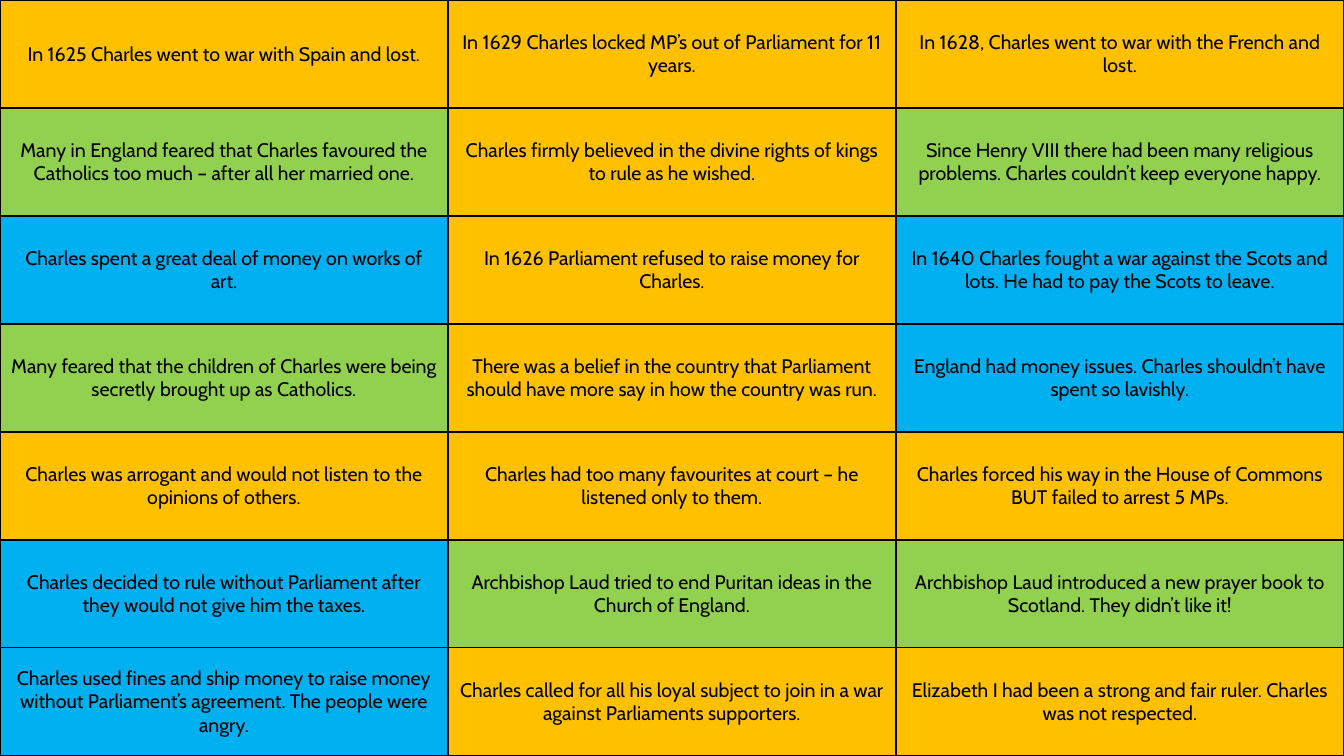
from lxml.etree import SubElement
from pptx import Presentation
from pptx.dml.color import RGBColor
from pptx.enum.text import MSO_ANCHOR, PP_ALIGN
from pptx.oxml.ns import qn
from pptx.util import Pt

WIDTH, HEIGHT = 960, 540
BLACK = "000000"
POLITICS, RELIGION, MONEY = "FFC000", "92D050", "00B0F0"

CAUSES = [
    [("In 1625 Charles went to war with Spain and lost.", POLITICS),
     ("In 1629 Charles locked MP’s out of Parliament for 11 years.", POLITICS),
     ("In 1628, Charles went to war with the French and lost.", POLITICS)],
    [("Many in England feared that Charles favoured the Catholics too much – after all her married one.", RELIGION),
     ("Charles firmly believed in the divine rights of kings to rule as he wished.", POLITICS),
     ("Since Henry VIII there had been many religious problems. Charles couldn’t keep everyone happy.", RELIGION)],
    [("Charles spent a great deal of money on works of art.", MONEY),
     ("In 1626 Parliament refused to raise money for Charles.", POLITICS),
     ("In 1640 Charles fought a war against the Scots and lots. He had to pay the Scots to leave.", MONEY)],
    [("Many feared that the children of Charles were being secretly brought up as Catholics.", RELIGION),
     ("There was a belief in the country that Parliament should have more say in how the country was run.", POLITICS),
     ("England had money issues. Charles shouldn’t have spent so lavishly.", MONEY)],
    [("Charles was arrogant and would not listen to the opinions of others.", POLITICS),
     ("Charles had too many favourites at court – he listened only to them.", POLITICS),
     ("Charles forced his way in the House of Commons BUT failed to arrest 5 MPs.", POLITICS)],
    [("Charles decided to rule without Parliament after they would not give him the taxes.", MONEY),
     ("Archbishop Laud tried to end Puritan ideas in the Church of England.", RELIGION),
     ("Archbishop Laud introduced a new prayer book to Scotland. They didn’t like it!", RELIGION)],
    [("Charles used fines and ship money to raise money without Parliament’s agreement. The people were angry.", MONEY),
     ("Charles called for all his loyal subject to join in a war against Parliaments supporters.", POLITICS),
     ("Elizabeth I had been a strong and fair ruler. Charles was not respected.", POLITICS)],
]


def color(value):
    """Turn a hex string into a colour."""
    return RGBColor.from_string(value)


def write(frame, text, *, font="Cabin", size=14, fill=BLACK, align=PP_ALIGN.CENTER):
    """Put one formatted paragraph into a text frame."""
    para = frame.paragraphs[0]
    para.alignment = align
    span = para.add_run()
    span.text = text
    span.font.name = font
    span.font.size = Pt(size)
    span.font.color.rgb = color(fill)


def outline(cell, value, width):
    """Draw a line on all four sides of a cell."""
    properties = cell._tc.get_or_add_tcPr()
    for side in ("a:lnL", "a:lnR", "a:lnT", "a:lnB"):
        line = SubElement(properties, qn(side), w=str(Pt(width)))
        solid = SubElement(line, qn("a:solidFill"))
        SubElement(solid, qn("a:srgbClr"), val=value)


def add_grid(page, entries):
    """Fill the page with a table of coloured statements."""
    rows, columns = len(entries), len(entries[0])
    table = page.shapes.add_table(rows, columns, 0, 0, Pt(WIDTH), Pt(HEIGHT)).table
    table.first_row = table.horz_banding = False
    for row, statements in enumerate(entries):
        for column, (text, fill) in enumerate(statements):
            cell = table.cell(row, column)
            cell.vertical_anchor = MSO_ANCHOR.MIDDLE
            outline(cell, BLACK, 1)
            cell.fill.solid()
            cell.fill.fore_color.rgb = color(fill)
            write(cell.text_frame, text)


def main():
    """Build and save the deck."""
    deck = Presentation()
    deck.slide_width, deck.slide_height = Pt(WIDTH), Pt(HEIGHT)
    page = deck.slides.add_slide(deck.slide_layouts[6])
    add_grid(page, CAUSES)
    deck.save("out.pptx")


if __name__ == "__main__":
    main()
